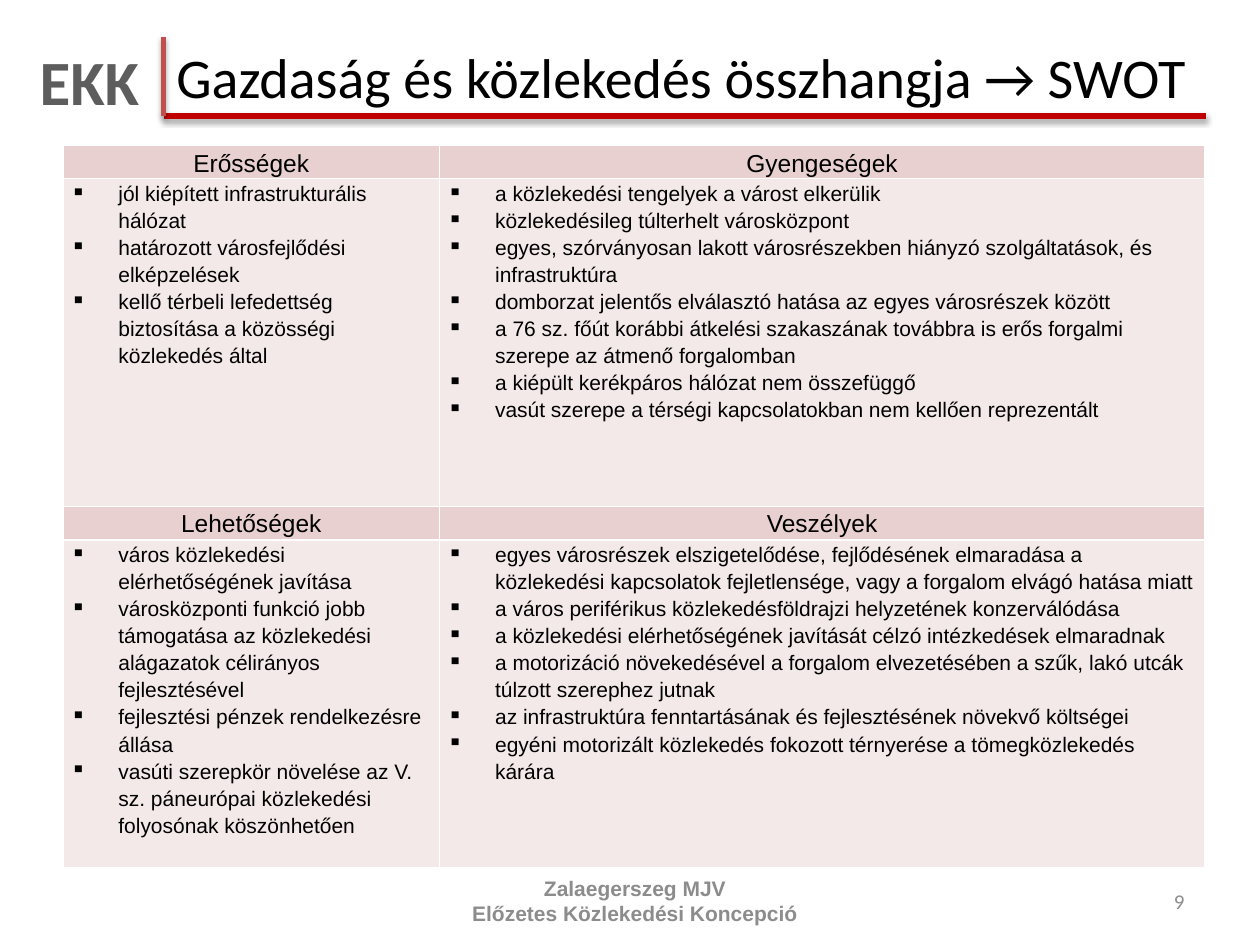
from lxml import etree
from pptx import Presentation
from pptx import util as u
from pptx.dml.color import RGBColor
from pptx.enum import shapes, text
from pptx.oxml import parse_xml
from pptx.oxml.ns import nsdecls, qn

WIDTH, HEIGHT = 10, 7.5
RULE_LEFT, RULE_TOP, RULE_BOTTOM = 1.3, 0.29, 0.92
TABLE_LEFT, TABLE_TOP, TABLE_RIGHT = 0.5, 1.15, 9.57
COLUMN_WIDTHS = [2.99, 6.07]
HEADING_HEIGHT, LIST_HEIGHT = 0.24, 2.6
FOOTER_TOP, FOOTER_HEIGHT = 6.95, 0.4
LIST_INDENT = 0.38

BLACK, GREY, DARK_GREY = "000000", "8C8C8C", "5D5D5D"
RED, SOFT_RED = "C00000", "C0504D"
HEADING_FILL, LIST_FILL = "E8D0D0", "F4E9E9"

SWOT = [
    [
        ("Erősségek", [
            "jól kiépített infrastrukturális hálózat",
            "határozott városfejlődési elképzelések",
            "kellő térbeli lefedettség biztosítása a közösségi közlekedés által",
        ]),
        ("Gyengeségek", [
            "a közlekedési tengelyek a várost elkerülik",
            "közlekedésileg túlterhelt városközpont",
            "egyes, szórványosan lakott városrészekben hiányzó szolgáltatások, és infrastruktúra",
            "domborzat jelentős elválasztó hatása az egyes városrészek között",
            "a 76 sz. főút korábbi átkelési szakaszának továbbra is erős forgalmi "
            "szerepe az átmenő forgalomban",
            "a kiépült kerékpáros hálózat nem összefüggő",
            "vasút szerepe a térségi kapcsolatokban nem kellően reprezentált",
        ]),
    ],
    [
        ("Lehetőségek", [
            "város közlekedési elérhetőségének javítása",
            "városközponti funkció jobb támogatása az közlekedési alágazatok "
            "célirányos fejlesztésével",
            "fejlesztési pénzek rendelkezésre állása",
            "vasúti szerepkör növelése az V. sz. páneurópai közlekedési "
            "folyosónak köszönhetően",
        ]),
        ("Veszélyek", [
            "egyes városrészek elszigetelődése, fejlődésének elmaradása a közlekedési "
            "kapcsolatok fejletlensége, vagy a forgalom elvágó hatása miatt",
            "a város periférikus közlekedésföldrajzi helyzetének konzerválódása",
            "a közlekedési elérhetőségének javítását célzó intézkedések elmaradnak",
            "a motorizáció növekedésével a forgalom elvezetésében a szűk, lakó utcák "
            "túlzott szerephez jutnak",
            "az infrastruktúra fenntartásának és fejlesztésének növekvő költségei",
            "egyéni motorizált közlekedés fokozott térnyerése a tömegközlekedés kárára",
        ]),
    ],
]


def color(hex_string):
    return RGBColor.from_string(hex_string)


def format_paragraph(paragraph, size, font="Arial", fill=BLACK, bold=False,
                     align=text.PP_ALIGN.LEFT):
    paragraph.alignment = align
    for run in paragraph.runs:
        run.font.size = u.Pt(size)
        run.font.name = font
        run.font.bold = bold
        run.font.color.rgb = color(fill)


def add_rule(slide, end_x, end_y, fill):
    """Draw a shadowed line from the corner where the two title rules meet."""
    line = slide.shapes.add_connector(
        shapes.MSO_CONNECTOR.STRAIGHT, u.Inches(RULE_LEFT), u.Inches(RULE_BOTTOM),
        u.Inches(end_x), u.Inches(end_y))
    line.line.color.rgb = color(fill)
    line.line.width = u.Pt(3)
    line._element.spPr.append(parse_xml(
        f'<a:effectLst {nsdecls("a")}>'
        '<a:outerShdw blurRad="40000" dist="23000" dir="5400000" rotWithShape="0">'
        '<a:srgbClr val="000000"><a:alpha val="35000"/></a:srgbClr>'
        '</a:outerShdw></a:effectLst>'))


def add_label(slide, words, left, top, width, height, size, wrap=True,
              anchor=text.MSO_ANCHOR.MIDDLE, **style):
    box = slide.shapes.add_textbox(*map(u.Inches, (left, top, width, height)))
    frame = box.text_frame
    frame.word_wrap = wrap
    frame.vertical_anchor = anchor
    paragraph = frame.paragraphs[0]
    paragraph.text = words
    format_paragraph(paragraph, size, **style)


def set_title(slide, words):
    title = slide.shapes.title
    title.left, title.top = u.Inches(RULE_LEFT), u.Inches(0.3)
    title.width, title.height = u.Inches(8.5), u.Inches(0.61)
    frame = title.text_frame
    frame.text = words
    frame.auto_size = text.MSO_AUTO_SIZE.NONE
    frame.vertical_anchor = text.MSO_ANCHOR.MIDDLE
    format_paragraph(frame.paragraphs[0], 32, font="Calibri")


def prepare_cell(cell, fill, words):
    cell.fill.solid()
    cell.fill.fore_color.rgb = color(fill)
    cell.margin_left = cell.margin_right = u.Inches(0.06)
    cell.margin_top = cell.margin_bottom = 0
    cell.text_frame.text = words
    for paragraph in cell.text_frame.paragraphs:
        paragraph.line_spacing = 1.15


def fill_heading(cell, heading, anchor):
    prepare_cell(cell, HEADING_FILL, heading)
    cell.vertical_anchor = anchor
    paragraph = cell.text_frame.paragraphs[0]
    paragraph.space_before = paragraph.space_after = u.Pt(3)
    format_paragraph(paragraph, 14, align=text.PP_ALIGN.CENTER)


def fill_list(cell, items):
    prepare_cell(cell, LIST_FILL, "\n".join(items))
    for paragraph in cell.text_frame.paragraphs:
        format_paragraph(paragraph, 12)
        properties = paragraph._p.get_or_add_pPr()
        properties.set("marL", str(u.Inches(LIST_INDENT)))
        properties.set("indent", str(-u.Inches(LIST_INDENT)))
        etree.SubElement(properties, qn("a:buChar")).set("char", "▪")


def add_swot_table(slide):
    row_heights = [HEADING_HEIGHT, LIST_HEIGHT] * len(SWOT)
    table = slide.shapes.add_table(
        len(row_heights), len(COLUMN_WIDTHS), u.Inches(TABLE_LEFT), u.Inches(TABLE_TOP),
        u.Inches(sum(COLUMN_WIDTHS)), u.Inches(sum(row_heights))).table
    table.first_row = table.horz_banding = False
    for column, width in zip(table.columns, COLUMN_WIDTHS):
        column.width = u.Inches(width)
    for row, height in zip(table.rows, row_heights):
        row.height = u.Inches(height)
    anchors = [text.MSO_ANCHOR.MIDDLE, text.MSO_ANCHOR.TOP]
    for band, (quadrants, anchor) in enumerate(zip(SWOT, anchors)):
        for column, (heading, items) in enumerate(quadrants):
            fill_heading(table.cell(2 * band, column), heading, anchor)
            fill_list(table.cell(2 * band + 1, column), items)


def main():
    presentation = Presentation()
    presentation.slide_width = u.Inches(WIDTH)
    presentation.slide_height = u.Inches(HEIGHT)
    slide = presentation.slides.add_slide(presentation.slide_layouts[5])

    add_rule(slide, TABLE_RIGHT, RULE_BOTTOM, RED)
    add_rule(slide, RULE_LEFT, RULE_TOP, SOFT_RED)
    add_label(slide, "EKK", 0.21, RULE_TOP, 1, 0.71, 36, wrap=False,
              anchor=text.MSO_ANCHOR.TOP, font="Calibri", fill=DARK_GREY,
              bold=True, align=text.PP_ALIGN.CENTER)
    set_title(slide, "Gazdaság és közlekedés összhangja → SWOT")
    add_swot_table(slide)
    add_label(slide, "9", 7.17, FOOTER_TOP, 2.33, FOOTER_HEIGHT, 12,
              font="Calibri", fill=GREY, align=text.PP_ALIGN.RIGHT)
    add_label(slide, "Zalaegerszeg MJV\vElőzetes Közlekedési Koncepció",
              3.27, FOOTER_TOP, 3.54, FOOTER_HEIGHT, 12,
              fill=GREY, bold=True, align=text.PP_ALIGN.CENTER)
    presentation.save("out.pptx")


if __name__ == "__main__":
    main()
